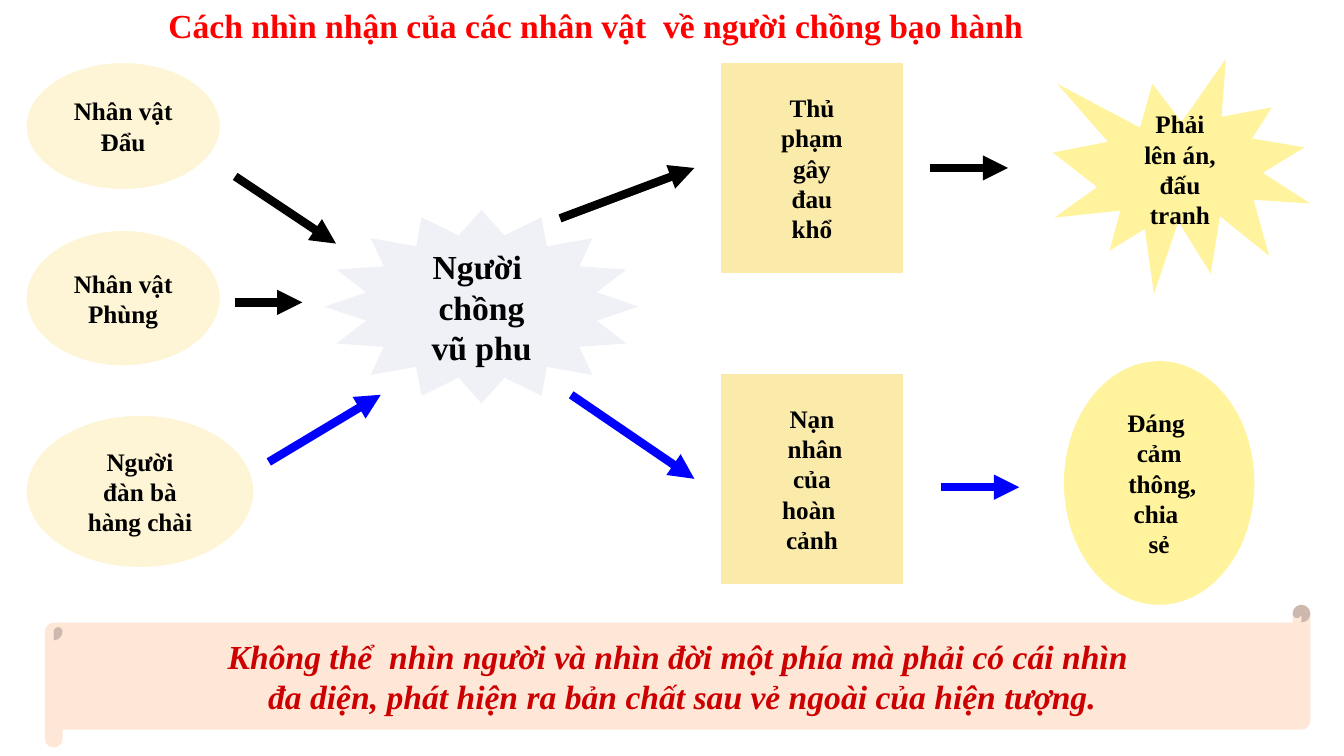
from lxml import etree
from pptx import Presentation
from pptx import util as u
from pptx.dml.color import RGBColor
from pptx.enum import shapes, text
from pptx.oxml.ns import qn

Pt = u.Pt
HUES = {"black": "000000", "white": "FFFFFF", "blue": "0000FF", "red": "FF0000",
        "dark": "CC0000", "cream": "FDF5D5", "sand": "FBEBAB", "yellow": "FFF39D",
        "mist": "EFF1F7", "peach": "FFE7D7"}
KIND = shapes.MSO_SHAPE


def hue(name):
    return RGBColor.from_string(HUES[name])


def write(frame, words, anchor, color="black", **style):
    """Fill a text frame with one centred paragraph per line of words."""
    frame.text = words
    frame.word_wrap = False
    frame.auto_size = text.MSO_AUTO_SIZE.NONE
    frame.vertical_anchor = anchor
    style = {"name": "Times New Roman", "size": Pt(18), "bold": True} | style
    for para in frame.paragraphs:
        para.alignment = text.PP_ALIGN.CENTER
        for run in para.runs:
            run.font.color.rgb = hue(color)
            for key, value in style.items():
                setattr(run.font, key, value)


deck = Presentation()
deck.slide_width, deck.slide_height = Pt(960), Pt(540)
slide = deck.slides.add_slide(deck.slide_layouts[5])

title = slide.shapes.title
place = {"left": 110, "top": 0, "width": 631, "height": 36}
for key, value in place.items():
    setattr(title, key, Pt(value))
write(title.text_frame, "Cách nhìn nhận của các nhân vật  về người chồng bạo hành",
      text.MSO_ANCHOR.TOP, "red", size=Pt(24))

# kind, left, top, width, height, fill, white border, words, text format
big = {"size": Pt(24)}
moral = big | {"color": "dark", "italic": True}
nodes = [
    (KIND.OVAL, 16, 42, 144, 96, "cream", True, "Nhân vật\nĐẩu", {}),
    (KIND.OVAL, 16, 162, 144, 102, "cream", True, "Nhân vật\nPhùng", {}),
    (KIND.OVAL, 16, 294, 168, 114, "cream", True, "Người\nđàn bà\nhàng chài", {}),
    (KIND.STAR_16_POINT, 232, 150, 224, 138, "mist", False,
     "Người \nchồng\nvũ phu", big),
    (KIND.RECTANGLE, 512, 42, 136, 156, "sand", True,
     "Thủ\nphạm\ngây\nđau\nkhổ", {}),
    (KIND.RECTANGLE, 512, 264, 136, 156, "sand", True,
     "Nạn\n nhân\ncủa\nhoàn \ncảnh", {}),
    (KIND.EXPLOSION1, 752, 42, 184, 168, "yellow", False,
     "Phải\nlên án,\nđấu\ntranh", {}),
    (KIND.OVAL, 760, 258, 136, 174, "yellow", False,
     "Đáng \ncảm\n thông,\nchia \nsẻ", {}),
    (KIND.HORIZONTAL_SCROLL, 32, 432, 904, 102, "peach", False,
     "Không thể  nhìn người và nhìn đời một phía mà phải có cái nhìn \n"
     "đa diện, phát hiện ra bản chất sau vẻ ngoài của hiện tượng.", moral),
]
for kind, left, top, width, height, fill, border, words, style in nodes:
    node = slide.shapes.add_shape(kind, Pt(left), Pt(top), Pt(width), Pt(height))
    node.shadow.inherit = False
    node.fill.solid()
    node.fill.fore_color.rgb = hue(fill)
    if border:
        node.line.color.rgb = hue("white")
        node.line.width = Pt(6)
    else:
        node.line.fill.background()
    write(node.text_frame, words, text.MSO_ANCHOR.MIDDLE, **style)

arrows = {
    "black": [(168, 126, 240, 174), (168, 216, 216, 216),
              (400, 156, 496, 120), (664, 120, 720, 120)],
    "blue": [(192, 330, 272, 282), (408, 282, 496, 342), (672, 348, 728, 348)],
}
for color, paths in arrows.items():
    for ends in paths:
        arrow = slide.shapes.add_connector(shapes.MSO_CONNECTOR.STRAIGHT,
                                           *[Pt(end) for end in ends])
        arrow.line.color.rgb = hue(color)
        arrow.line.width = Pt(6)
        etree.SubElement(arrow.line._get_or_add_ln(), qn("a:tailEnd"), type="triangle")
        etree.SubElement(arrow._element.spPr, qn("a:effectLst"))

deck.save("out.pptx")
